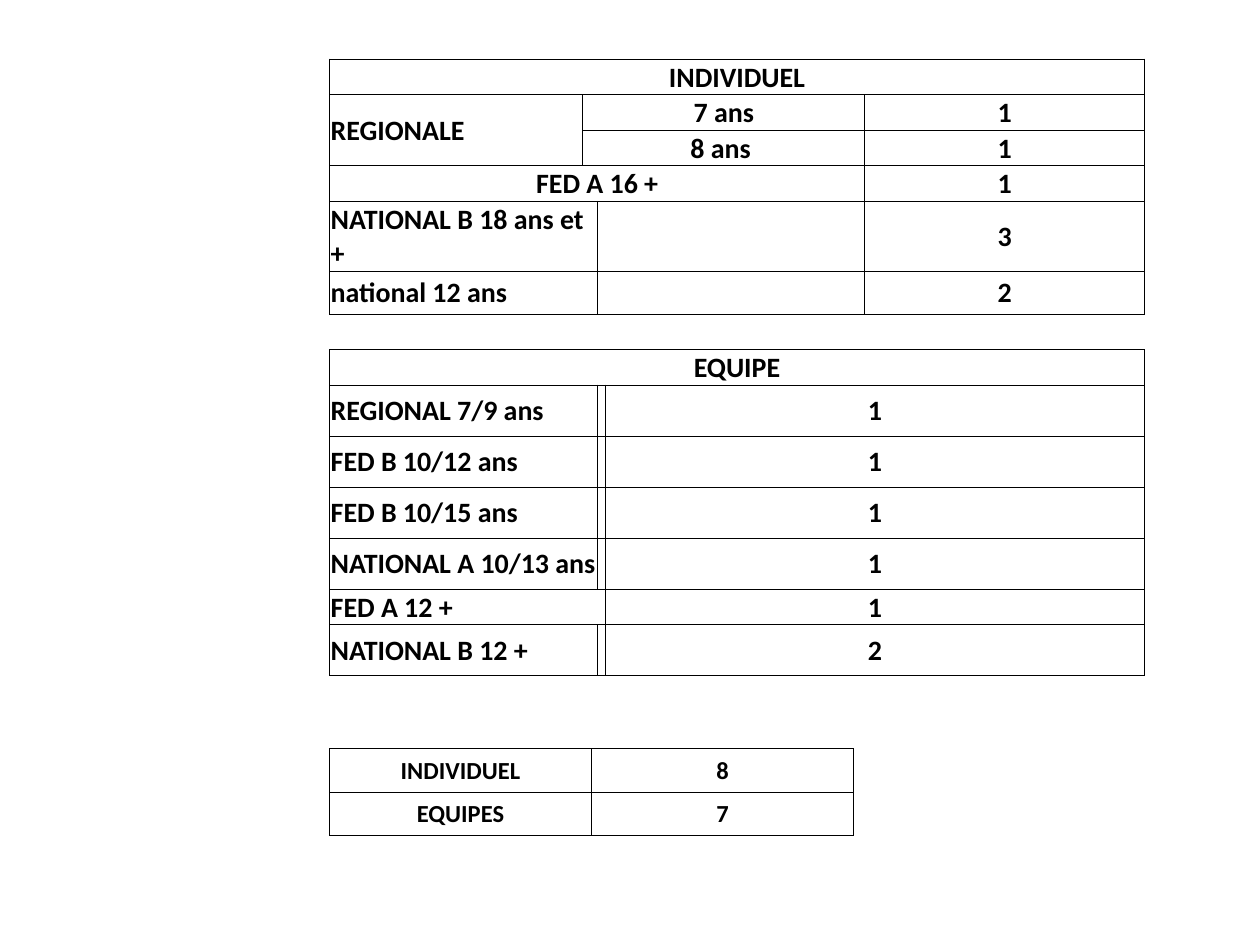
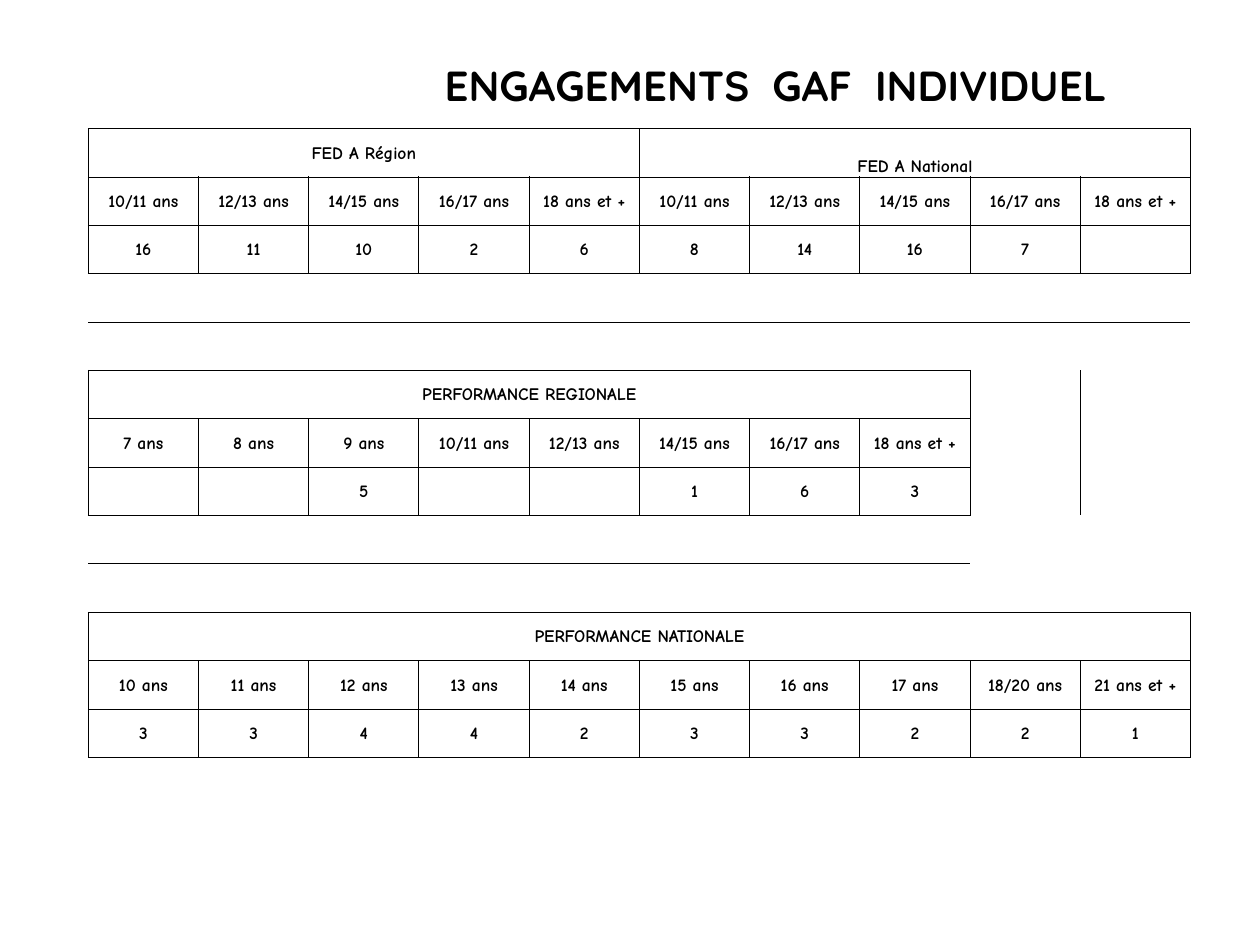
import pptx
import pptx.dml.color
import pptx.enum.text
import pptx.oxml.ns
import pptx.util
from lxml import etree

BLACK = pptx.dml.color.RGBColor(0x00, 0x00, 0x00)
BORDER_WIDTH = pptx.util.Pt(0.5)
CELL_MARGIN = pptx.util.Inches(0.01)
PLAIN_TABLE_STYLE = "{2D5ABB26-0587-4C30-8999-92F81FD0307C}"
SIDES = {"a:lnL": (0, -1), "a:lnR": (0, 1), "a:lnT": (-1, 0), "a:lnB": (1, 0)}
CENTER = pptx.enum.text.PP_ALIGN.CENTER
LEFT = pptx.enum.text.PP_ALIGN.LEFT
MIDDLE = pptx.enum.text.MSO_ANCHOR.MIDDLE

presentation = pptx.Presentation()
presentation.slide_width = pptx.util.Inches(10)
presentation.slide_height = pptx.util.Inches(7.5)
PERCENT_X = presentation.slide_width / 100
PERCENT_Y = presentation.slide_height / 100


def add_borders(cell, row, column, framed):
    properties = cell._tc.get_or_add_tcPr()
    for side, (down, right) in SIDES.items():
        if framed.isdisjoint({(row, column), (row + down, column + right)}):
            continue
        line = etree.SubElement(properties, pptx.oxml.ns.qn(side), w=str(BORDER_WIDTH))
        fill = etree.SubElement(line, pptx.oxml.ns.qn("a:solidFill"))
        etree.SubElement(fill, pptx.oxml.ns.qn("a:srgbClr"), val=str(BLACK))


def add_grid(slide, left, top, widths, heights, rows, font_name, font_size, label_span=0):
    frame = slide.shapes.add_table(
        len(heights), len(widths),
        round(left * PERCENT_X), round(top * PERCENT_Y),
        round(sum(widths) * PERCENT_X), round(sum(heights) * PERCENT_Y))
    table = frame.table
    table.first_row = table.horz_banding = False
    table._tbl.tblPr.find(pptx.oxml.ns.qn("a:tableStyleId")).text = PLAIN_TABLE_STYLE
    for column, width in zip(table.columns, widths):
        column.width = round(width * PERCENT_X)
    for row, height in zip(table.rows, heights):
        row.height = round(height * PERCENT_Y)

    framed = set()
    for row, entries in enumerate(rows):
        column = 0
        for text, span in entries:
            cell = table.cell(row, column)
            if span > 1:
                cell.merge(table.cell(row, column + span - 1))
            if text is not None:
                framed.update((row, column + offset) for offset in range(span))
            paragraph = cell.text_frame.paragraphs[0]
            paragraph.text = text or ""
            is_label = column == 0 and span <= label_span
            paragraph.alignment = LEFT if is_label else CENTER
            for run in paragraph.runs:
                run.font.name = font_name
                run.font.size = pptx.util.Pt(font_size)
                run.font.bold = True
                run.font.color.rgb = BLACK
            if not text:
                etree.SubElement(paragraph._p, pptx.oxml.ns.qn("a:endParaRPr"),
                                 sz=str(font_size * 100))
            column += span

    for row in range(len(heights)):
        for column in range(len(widths)):
            cell = table.cell(row, column)
            cell.vertical_anchor = MIDDLE
            cell.margin_left = cell.margin_right = cell.margin_top = CELL_MARGIN
            cell.margin_bottom = 0
            add_borders(cell, row, column, framed)
            cell.fill.background()
    return table


totals_slide = presentation.slides.add_slide(presentation.slide_layouts[6])
TABLES_LEFT = 26.15
LINE, TALL_LINE, TWO_LINES, TEAM_LINE = 3.72, 4.57, 7.33, 5.4

entry_rows = [
    [("INDIVIDUEL", 5)],
    [("REGIONALE", 1), ("7 ans", 3), ("1", 1)],
    [("", 1), ("8 ans ", 3), ("1", 1)],
    [("FED A 16 +", 4), ("1", 1)],
    [("NATIONAL B 18 ans et +", 2), ("", 2), ("3", 1)],
    [("national 12 ans", 2), ("", 2), ("2", 1)],
    [(None, 2), (None, 2), (None, 1)],
    [("EQUIPE", 5)],
    [("REGIONAL 7/9 ans", 2), ("", 1), ("1", 2)],
    [("FED B 10/12 ans", 2), ("", 1), ("1", 2)],
    [("FED B 10/15 ans", 2), ("", 1), ("1", 2)],
    [("NATIONAL A 10/13 ans", 2), ("", 1), ("1", 2)],
    [("FED A 12 +", 3), ("1", 2)],
    [("NATIONAL B 12 +", 2), ("", 1), ("2", 2)],
]
entry_heights = ([LINE] * 4 + [TWO_LINES, TALL_LINE] + [LINE] * 2
                 + [TEAM_LINE] * 4 + [LINE, TEAM_LINE])
entry_table = add_grid(totals_slide, TABLES_LEFT, 6.25, [20.1, 1.2, 0.6, 20.6, 22.2],
                       entry_heights, entry_rows, "Calibri", 16, label_span=3)
entry_table.cell(1, 0).merge(entry_table.cell(2, 0))

add_grid(totals_slide, TABLES_LEFT, 79.2, [20.8] * 2, [4.6] * 2,
         [[("INDIVIDUEL", 1), ("8", 1)], [("EQUIPES", 1), ("7", 1)]], "Calibri", 14)

individual_slide = presentation.slides.add_slide(presentation.slide_layouts[5])
title = individual_slide.shapes.title
title.left, title.top = round(32.5 * PERCENT_X), round(5.6 * PERCENT_Y)
title.width, title.height = round(58.1 * PERCENT_X), round(6.7 * PERCENT_Y)
title.text_frame.vertical_anchor = MIDDLE
title.text_frame.auto_size = pptx.enum.text.MSO_AUTO_SIZE.NONE
paragraph = title.text_frame.paragraphs[0]
paragraph.alignment = CENTER
for piece in ("ENGAGEMENTS", " ", "GAF", " ", "INDIVIDUEL"):
    run = paragraph.add_run()
    run.text = piece
    run.font.name = "Quicksand"
    run.font.size = pptx.util.Pt(24)
    run.font.bold = True
    run.font.color.rgb = BLACK
    if piece == " ":
        run.font._element.set("spc", "650")

AGE_COLUMNS = 10
federal_ages = ["10/11 ans", "12/13 ans", "14/15 ans", "16/17 ans", "18 ans et +"]
blocks = [
    ([("FED A Région", 5), ("FED A National", 5)], federal_ages * 2,
     ["16", "11", "10", "2", "6", "8", "14", "16", "7", ""]),
    ([("PERFORMANCE REGIONALE", 8)], ["7 ans", "8 ans", "9 ans"] + federal_ages,
     ["", "", "5", "", "", "1", "6", "3"]),
    ([("PERFORMANCE NATIONALE", 10)],
     [f"{age} ans" for age in range(10, 18)] + ["18/20 ans", "21 ans et +"],
     ["3", "3", "4", "4", "2", "3", "3", "2", "2", "1"]),
]
age_rows = []
for headings, ages, counts in blocks:
    if age_rows:
        age_rows += [[(None, 1)] * AGE_COLUMNS] * 2
    beyond = [(None, 1)] * (AGE_COLUMNS - len(ages))
    age_rows.append(headings + beyond)
    for values in (ages, counts):
        age_rows.append([(value, 1) for value in values] + beyond)

age_table = add_grid(individual_slide, 7, 13.6, [8.75] * AGE_COLUMNS,
                     [5.12] * len(age_rows), age_rows, "Comic Neue", 10)
age_table.cell(0, 5).vertical_anchor = pptx.enum.text.MSO_ANCHOR.BOTTOM

presentation.save("out.pptx")
